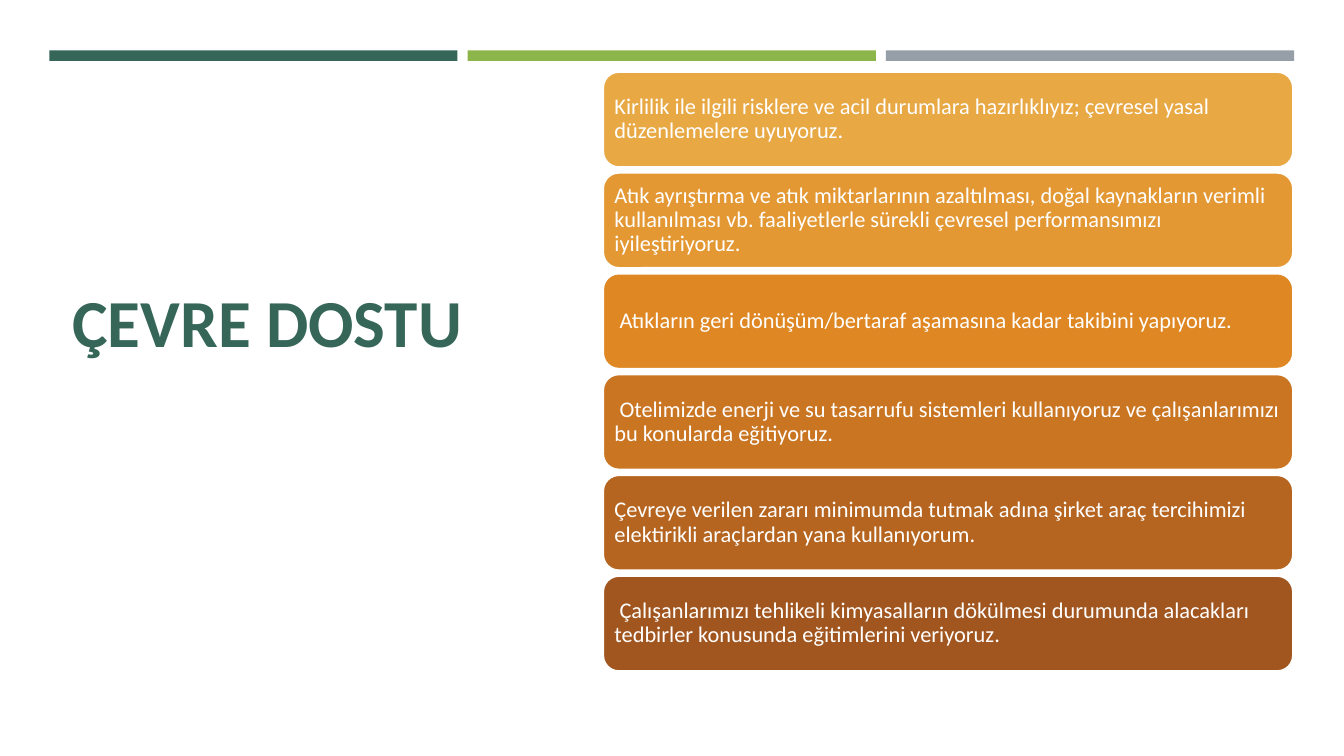
from pptx import Presentation
from pptx.dml.color import RGBColor
from pptx.enum.shapes import MSO_SHAPE as Shape
from pptx.enum.text import MSO_ANCHOR as Anchor, PP_ALIGN as Align
from pptx.util import Pt

FONT = "Calibri"
WHITE = "FFFFFF"
GREEN = "366658"
BAR_COLORS = [GREEN, "8CB64A", "969FA7"]
COMMITMENTS = [
    ("E8A844", "Kirlilik ile ilgili risklere ve acil durumlara hazırlıklıyız; "
               "çevresel yasal düzenlemelere uyuyoruz."),
    ("E39833", "Atık ayrıştırma ve atık miktarlarının azaltılması, doğal kaynakların "
               "verimli kullanılması vb. faaliyetlerle sürekli çevresel "
               "performansımızı iyileştiriyoruz."),
    ("DE8723", " Atıkların geri dönüşüm/bertaraf aşamasına kadar takibini yapıyoruz."),
    ("CA7521", " Otelimizde enerji ve su tasarrufu sistemleri kullanıyoruz ve "
               "çalışanlarımızı bu konularda eğitiyoruz."),
    ("B56520", "Çevreye verilen zararı minimumda tutmak adına şirket araç tercihimizi "
               "elektirikli araçlardan yana kullanıyorum."),
    ("A1561F", " Çalışanlarımızı tehlikeli kimyasalların dökülmesi durumunda alacakları "
               "tedbirler konusunda eğitimlerini veriyoruz."),
]


def rgb(color):
    return RGBColor.from_string(color)


def add_block(slide, kind, left, top, width, height, color):
    block = slide.shapes.add_shape(kind, Pt(left), Pt(top), Pt(width), Pt(height))
    block.shadow.inherit = False
    block.fill.solid()
    block.fill.fore_color.rgb = rgb(color)
    block.line.fill.background()
    return block


def write(frame, text, size, color, align, bold=False):
    frame.word_wrap = True
    frame.vertical_anchor = Anchor.MIDDLE
    paragraph = frame.paragraphs[0]
    paragraph.text = text
    paragraph.alignment = align
    font = paragraph.font
    font.name, font.size, font.bold = FONT, Pt(size), bold
    font.color.rgb = rgb(color)
    return paragraph


def add_top_bars(slide, left, top, width, height, gap=7.2):
    count = len(BAR_COLORS)
    bar_width = (width - gap * (count - 1)) / count
    for i, color in enumerate(BAR_COLORS):
        add_block(slide, Shape.RECTANGLE, left + i * (bar_width + gap), top,
                  bar_width, height, color)


def add_title(slide, left, top, width, height):
    title = slide.shapes.add_textbox(Pt(left), Pt(top), Pt(width), Pt(height))
    write(title.text_frame, "ÇEVRE DOSTU", 48, GREEN, Align.CENTER, bold=True)


def add_commitments(slide, left, top, width, height, gap=3.6):
    count = len(COMMITMENTS)
    card_height = (height - gap * (count - 1)) / count
    for i, (color, text) in enumerate(COMMITMENTS):
        card = add_block(slide, Shape.ROUNDED_RECTANGLE, left,
                         top + i * (card_height + gap), width, card_height, color)
        card.line.color.rgb = rgb(WHITE)
        card.line.width = Pt(1.75)
        frame = card.text_frame
        frame.margin_left = frame.margin_right = Pt(5)
        frame.margin_top = frame.margin_bottom = Pt(5)
        write(frame, text, 16, WHITE, Align.LEFT).line_spacing = 0.9


def main():
    deck = Presentation()
    deck.slide_width, deck.slide_height = Pt(960), Pt(540)
    slide = deck.slides.add_slide(deck.slide_layouts[6])

    # Three coloured bars across the top
    add_top_bars(slide, 35.2, 36, 889.2, 7.5)
    # Heading on the left
    add_title(slide, 41, 49, 300, 360)
    # Stack of commitments on the right
    add_commitments(slide, 430.6, 51.2, 493.2, 428.4)

    deck.save("out.pptx")


if __name__ == "__main__":
    main()
